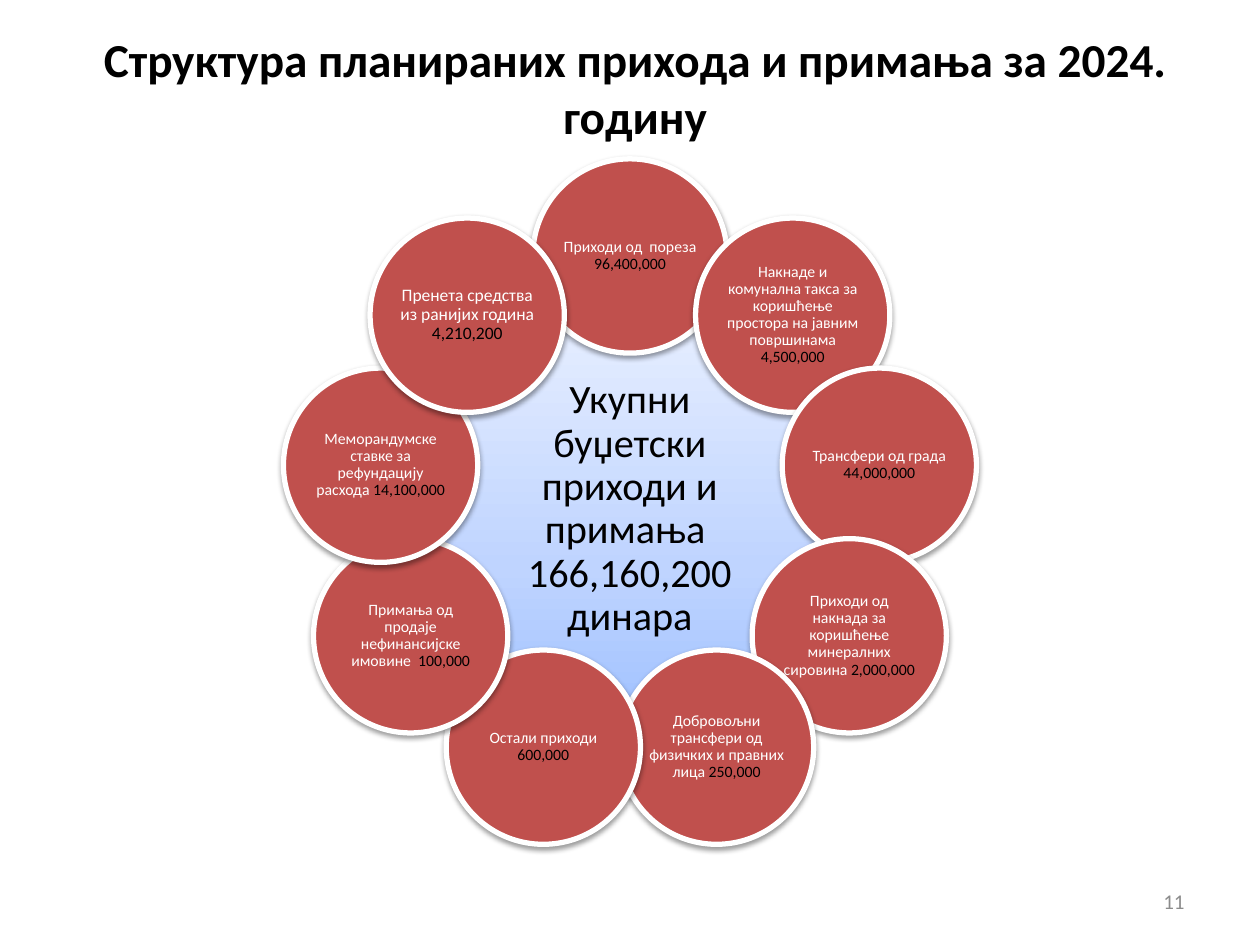
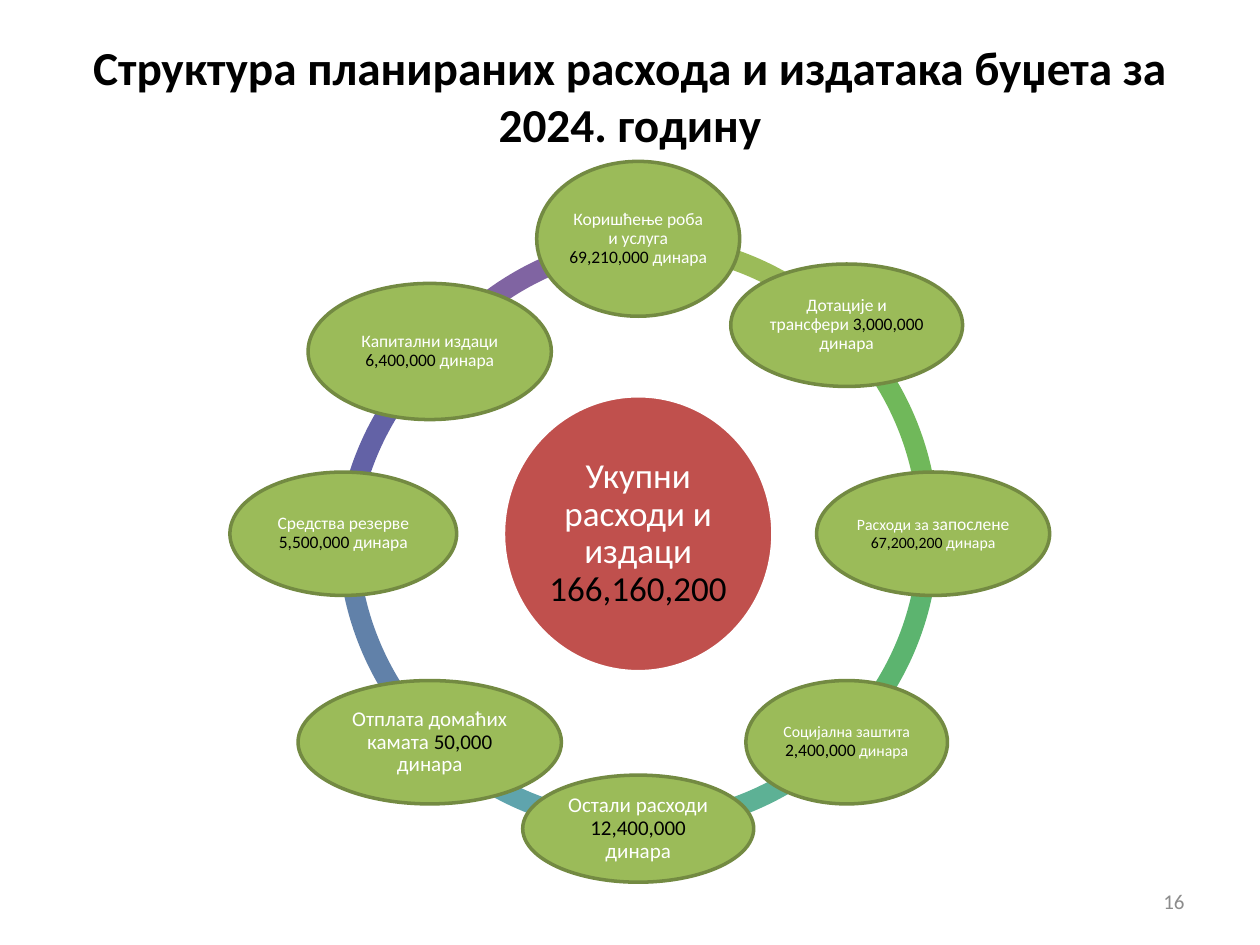
from math import cos, radians, sin

from lxml import etree
from pptx import Presentation
from pptx.dml.color import RGBColor
from pptx.enum.shapes import MSO_SHAPE as SHAPE
from pptx.enum.text import MSO_ANCHOR as ANCHOR, PP_ALIGN as ALIGN
from pptx.oxml import parse_xml
from pptx.oxml.ns import qn
from pptx.util import Pt

FONT = "Calibri"
NS = 'xmlns:a="http://schemas.openxmlformats.org/drawingml/2006/main"'
C = {
    "white": "FFFFFF", "black": "000000", "grey": "8C8C8C",
    "red": "C0504D", "green": "9BBB59", "olive": "738A42",
    "blue_line": "4B7EBC", "blue": "A4C4FF", "blue_mid": "BFD4FF", "blue_pale": "E6EEFF",
}

# Content: income
INCOME_TITLE = "Структура планираних прихода и примања за 2024. годину"
INCOME_TOTAL = "Укупни буџетски приходи и примања  166,160,200 динара"
INCOME = [  # label, amount, text size; clockwise from the top
    ("Приходи од  пореза", "96,400,000", 9),
    ("Накнаде и комунална такса за коришћење простора на јавним површинама", "4,500,000", 9),
    ("Трансфери од града", "44,000,000", 9),
    ("Приходи од накнада за коришћење минералних сировина", "2,000,000", 9),
    ("Добровољни трансфери од физичких и правних лица", "250,000", 9),
    ("Остали приходи", "600,000", 9),
    ("Примања од продаје нефинансијске имовине ", "100,000", 9),
    ("Меморандумске ставке за рефундацију расхода", "14,100,000", 9),
    ("Пренета средства из ранијих година", "4,210,200", 10),
]

# Content: spending
SPENDING_TITLE = "Структура планираних расхода и издатака буџета за 2024. годину"
SPENDING_TOTAL = ("Укупни расходи и издаци", "166,160,200")
SPENDING = [  # label parts, amount, (label, amount, unit) sizes, width, height, drop
    (["Коришћење роба и услуга"], "69,210,000", (10, 10, 10), 116, 88.5, 0),
    (["Дотације и трансфери"], "3,000,000", (10, 10, 10), 132.5, 70, 0),
    (["Расходи за ", "запослене"], "67,200,200", (9, 9, 9), 133.2, 70.5, 0),
    (["Социјална заштита"], "2,400,000", (9, 10, 9), 115.2, 70.5, 0),
    (["Остали расходи"], "12,400,000", (12, 12, 12), 132, 61.2, 0),
    (["Отплата домаћих камата"], "50,000", (12, 12, 12), 150.5, 70.5, 0),
    (["Средства резерве"], "5,500,000", (10, 10, 10), 129.6, 70.5, 0),
    (["Капитални издаци"], "6,400,000", (10, 10, 10), 139, 77.8, 15),
]
ARC_COLOURS = ["9BBB59", "70B85A", "5CB46F", "5DB195", "5FA4AD", "6181A9", "6362A6", "8064A2"]
# Arcs that meet the lowered node: left, top, start and end angle
BENT_ARCS = {6: (191.5, 150.5, 185.81, 225.94), 7: (208, 132.5, 217.83, 264.88)}


def rgb(name):
    return RGBColor.from_string(C.get(name, name))


def write(sp, runs, size, align=ALIGN.CENTER, inset=None, spacing=None, bold=False):
    """Fill a shape with one paragraph; a run is (text, colour[, size])."""
    tf = sp.text_frame
    tf.word_wrap = True
    tf.vertical_anchor = ANCHOR.MIDDLE
    if inset is not None:
        tf.margin_left = tf.margin_right = tf.margin_top = tf.margin_bottom = Pt(inset)
    p = tf.paragraphs[0]
    p.alignment = align
    if spacing:
        p.line_spacing = spacing
    p.font.name, p.font.size, p.font.bold = FONT, Pt(size), bold
    for text, colour, *own_size in runs:
        r = p.add_run()
        r.text = text
        r.font.color.rgb = rgb(colour)
        if own_size and own_size[0] != size:
            r.font.size = Pt(own_size[0])


def add_shape(s, kind, left, top, w, h, fill, line=None, weight=2):
    sp = s.shapes.add_shape(kind, Pt(left), Pt(top), Pt(w), Pt(h))
    sp.shadow.inherit = False
    sp.fill.solid()
    sp.fill.fore_color.rgb = rgb(fill)
    if line:
        sp.line.color.rgb = rgb(line)
        sp.line.width = Pt(weight)
    else:
        sp.line.fill.background()
    return sp


def add_ellipse(s, cx, cy, w, h, fill, line, weight=2):
    return add_shape(s, SHAPE.OVAL, cx - w / 2, cy - h / 2, w, h, fill, line, weight)


def add_shadow(sp):
    effects = sp._element.spPr.find(qn("a:effectLst"))
    effects.append(parse_xml(
        f'<a:outerShdw {NS} blurRad="{Pt(3.1)}" dist="{Pt(1.6)}" dir="5400000" rotWithShape="0">'
        f'<a:srgbClr val="{C["black"]}"><a:alpha val="38000"/></a:srgbClr></a:outerShdw>'))


def set_gradient(sp, stops, angle):
    solid = sp._element.spPr.find(qn("a:solidFill"))
    grad = etree.Element(qn("a:gradFill"), rotWithShape="1")
    stop_list = etree.SubElement(grad, qn("a:gsLst"))
    for pos, colour in stops:
        stop = etree.SubElement(stop_list, qn("a:gs"), pos=str(pos * 1000))
        etree.SubElement(stop, qn("a:srgbClr"), val=C[colour])
    etree.SubElement(grad, qn("a:lin"), ang=str(angle * 60000), scaled="0")
    solid.getparent().replace(solid, grad)


def around(cx, cy, radius, i, count):
    """Place i of count, clockwise from the top."""
    a = radians(360 * i / count)
    return cx + radius * sin(a), cy - radius * cos(a)


def add_slide(prs, title, number, left, top, height):
    s = prs.slides.add_slide(prs.slide_layouts[6])
    tb = s.shapes.add_textbox(Pt(left), Pt(top), Pt(648), Pt(height))
    write(tb, [(title, "black")], 27, bold=True)
    tb = s.shapes.add_textbox(Pt(516), Pt(500.5), Pt(168), Pt(28.8))
    write(tb, [(str(number), "grey")], 12, ALIGN.RIGHT)
    return s


def build_income(prs):
    s = add_slide(prs, INCOME_TITLE, 11, 39, 19.5, 61)
    cx, cy, radius = 360, 291, 144.7
    core = add_ellipse(s, cx, cy, 222, 222, "blue", "blue_line", 0.75)
    set_gradient(core, [(0, "blue"), (35, "blue_mid"), (100, "blue_pale")], 270)
    add_shadow(core)
    write(core, [(INCOME_TOTAL, "black")], 23, inset=2.2, spacing=0.9)
    for i, (label, amount, size) in enumerate(INCOME):
        x, y = around(cx, cy, radius, i, len(INCOME))
        sp = add_ellipse(s, x, y, 111, 111, "red", "white", 3)
        add_shadow(sp)
        write(sp, [(label + " ", "white"), (amount, "black")], size, inset=0.7, spacing=0.9)


def build_spending(prs):
    s = add_slide(prs, SPENDING_TITLE, 16, 36, 21, 67)
    cx, cy, radius, ring = 364.7, 305, 168.5, 343.4
    count = len(SPENDING)
    step = 360 / count

    # Ring, last arc at the back
    for i in reversed(range(count)):
        start = (270 + step * i) % 360
        rule = (cx - ring / 2, cy - ring / 2, start, (start + step) % 360)
        left, top, start, end = BENT_ARCS.get(i, rule)
        arc = add_shape(s, SHAPE.BLOCK_ARC, left, top, ring, ring, ARC_COLOURS[i])
        for k, value in enumerate((start * 0.6, end * 0.6, 0.034)):
            arc.adjustments[k] = value

    # Total and its parts
    core = add_ellipse(s, cx, cy, 154, 157.7, "red", "white")
    label, amount = SPENDING_TOTAL
    write(core, [(label + " ", "white"), (amount, "black")], 20, inset=2, spacing=0.9)
    for i, (parts, amount, sizes, w, h, drop) in enumerate(SPENDING):
        x, y = around(cx, cy, radius, i, count)
        sp = add_ellipse(s, x, y + drop, w, h, "green", "olive")
        size, amount_size, unit_size = sizes
        runs = [(part, "white", size + k) for k, part in enumerate(parts)]
        runs += [(" ", "white", size), (amount, "black", amount_size),
                 (" динара", "white", unit_size)]
        write(sp, runs, size, inset=1, spacing=0.9)


def main():
    prs = Presentation()
    prs.slide_width, prs.slide_height = Pt(720), Pt(540)
    build_income(prs)
    build_spending(prs)
    prs.save("out.pptx")


if __name__ == "__main__":
    main()
